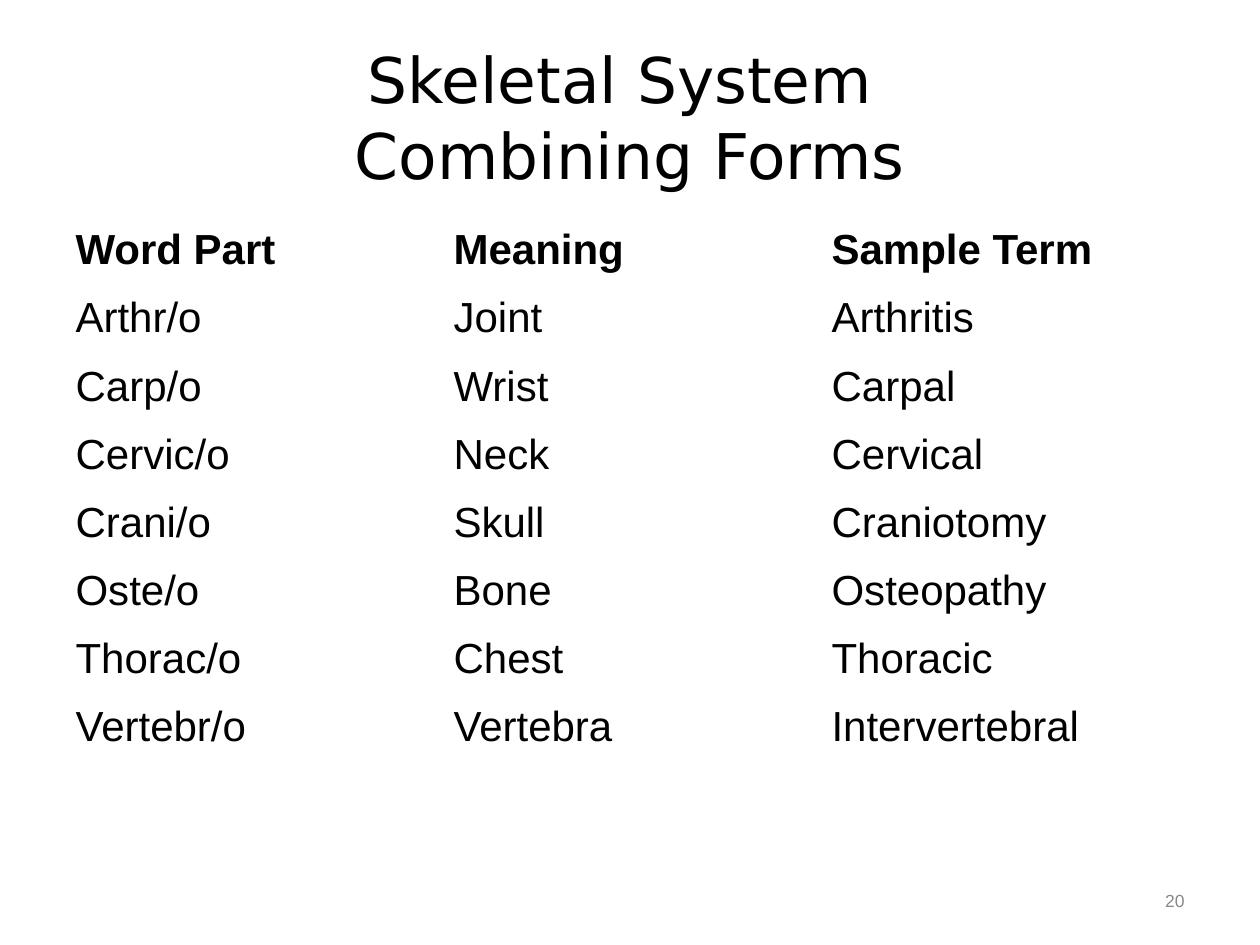
from pptx import Presentation
from pptx.dml.color import RGBColor
from pptx.enum.text import MSO_ANCHOR, PP_ALIGN
from pptx.util import Inches, Pt

COLORS = {"text": "000000", "page_number": "898989"}
TITLE_FONT = "DejaVu Sans"
BODY_FONT = "Arial"
TITLE_LINES = ["Skeletal System ", "Combining Forms"]
COMBINING_FORMS = [
    ("Word Part", "Meaning", "Sample Term"),
    ("Arthr/o", "Joint", "Arthritis"),
    ("Carp/o", "Wrist", "Carpal"),
    ("Cervic/o", "Neck", "Cervical"),
    ("Crani/o", "Skull", "Craniotomy"),
    ("Oste/o", "Bone", "Osteopathy"),
    ("Thorac/o", "Chest", "Thoracic"),
    ("Vertebr/o", "Vertebra", "Intervertebral"),
]


def add_run(paragraph, text, font_name, size, color, bold=False):
    """Append one formatted run to a paragraph."""
    run = paragraph.add_run()
    run.text = text
    run.font.name = font_name
    run.font.size = Pt(size)
    run.font.bold = bold
    run.font.color.rgb = RGBColor.from_string(COLORS[color])


def add_text(slide, left, top, width, height, lines, alignment, font_name, size, color):
    """Add a vertically centred text box whose lines share one paragraph."""
    shape = slide.shapes.add_textbox(Inches(left), Inches(top), Inches(width), Inches(height))
    shape.text_frame.word_wrap = True
    shape.text_frame.vertical_anchor = MSO_ANCHOR.MIDDLE
    paragraph = shape.text_frame.paragraphs[0]
    paragraph.alignment = alignment
    for index, line in enumerate(lines):
        if index:
            paragraph.add_line_break()
        add_run(paragraph, line, font_name, size, color)


def add_forms_table(slide, left, top, width, height, rows):
    """Add an unfilled table with a bold header row."""
    shape = slide.shapes.add_table(
        len(rows), len(rows[0]), Inches(left), Inches(top), Inches(width), Inches(height)
    )
    table = shape.table
    table.first_row = False
    table.horz_banding = False
    for row_index, row in enumerate(rows):
        for column_index, text in enumerate(row):
            cell = table.cell(row_index, column_index)
            cell.fill.background()
            paragraph = cell.text_frame.paragraphs[0]
            add_run(paragraph, text, BODY_FONT, 24, "text", bold=row_index == 0)


def main():
    """Build and save the combining forms slide."""
    presentation = Presentation()
    presentation.slide_width = Inches(10)
    presentation.slide_height = Inches(7.5)
    slide = presentation.slides.add_slide(presentation.slide_layouts[6])
    add_text(slide, 0.5, 0.3, 9, 1.25, TITLE_LINES, PP_ALIGN.CENTER, TITLE_FONT, 36, "text")
    add_forms_table(slide, 0.5, 1.75, 9, 4.33, COMBINING_FORMS)
    add_text(slide, 8.94, 6.85, 0.56, 0.6, ["20"], PP_ALIGN.RIGHT, BODY_FONT, 10, "page_number")
    presentation.save("out.pptx")


if __name__ == "__main__":
    main()
